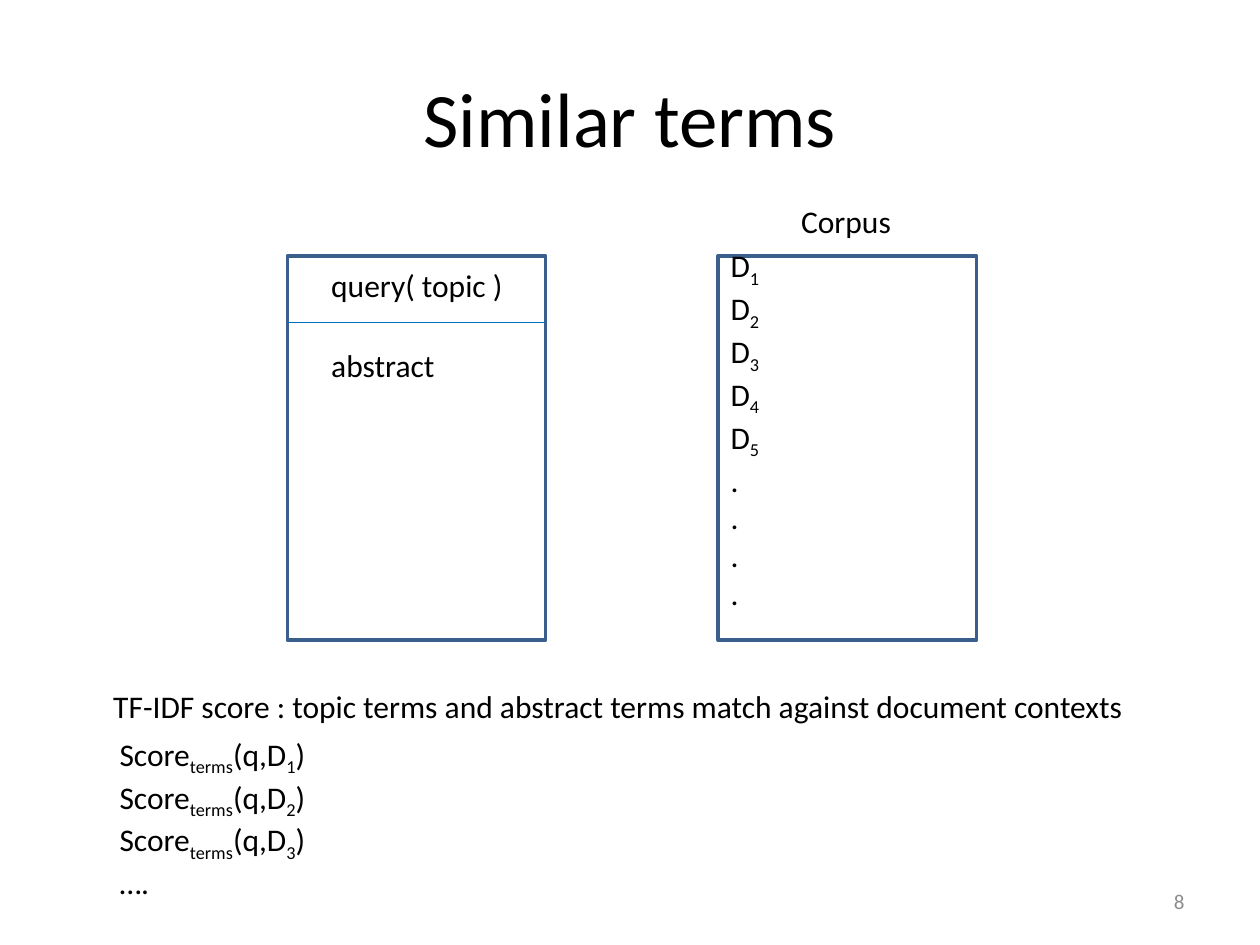
from dataclasses import dataclass

from lxml.etree import SubElement
from pptx import Presentation
from pptx.dml.color import RGBColor
from pptx.enum.shapes import MSO_CONNECTOR, MSO_SHAPE
from pptx.enum.text import MSO_ANCHOR, MSO_AUTO_SIZE, PP_ALIGN
from pptx.oxml.ns import qn
from pptx.shapes.autoshape import Shape
from pptx.shapes.shapetree import GroupShapes, SlideShapes
from pptx.text.text import TextFrame
from pptx.util import Pt

Tree = SlideShapes | GroupShapes


@dataclass(frozen=True)
class Theme:
    face: str = "Calibri"
    ink: RGBColor = RGBColor(0, 0, 0)
    gray: RGBColor = RGBColor(0x8C, 0x8C, 0x8C)
    edge: RGBColor = RGBColor(0x3A, 0x5F, 0x8C)
    rule: RGBColor = RGBColor(0x00, 0x70, 0xC0)
    head: int = 44
    body: int = 18
    foot: int = 12


@dataclass(frozen=True)
class Box:
    left: float
    top: float
    width: float
    height: float

    def area(self) -> tuple[Pt, Pt, Pt, Pt]:
        return Pt(self.left), Pt(self.top), Pt(self.width), Pt(self.height)


@dataclass(frozen=True)
class Label:
    box: Box
    lines: tuple[str, ...]
    wrap: bool = False


THEME = Theme()
QUERY = Box(164.2, 146.2, 147.6, 219.6)
CORPUS = Box(410.4, 146.2, 147.6, 219.6)
SPLIT = 184.3  # height of the rule between topic and abstract

# Every second part between bars is a subscript
DOCS = tuple(f"D|{n}" for n in range(1, 6)) + (".",) * 4
SCORES = tuple(f"Score|terms|(q,D|{n}|)" for n in range(1, 4)) + ("….",)

PARTS = (
    Label(Box(182.2, 148.3, 118.1, 29.1), ("query( topic )",)),
    Label(Box(182.2, 194.4, 74.2, 29.1), ("abstract",)),
)
NOTES = (
    Label(Box(450.7, 111.6, 66.2, 29.1), ("Corpus",)),
    Label(Box(57.6, 388.8, 625.7, 29.1),
          ("TF-IDF score : topic terms and abstract terms "
           "match against document contexts",), True),
    Label(Box(61.2, 416.2, 149.8, 94.3), SCORES, True),
)


def write(frame: TextFrame, lines: tuple[str, ...], size: int = THEME.body,
          ink: RGBColor = THEME.ink, align: PP_ALIGN = PP_ALIGN.LEFT) -> None:
    for i, line in enumerate(lines):
        para = frame.add_paragraph() if i else frame.paragraphs[0]
        para.alignment = align
        para.font.name = THEME.face
        para.font.size = Pt(size)
        para.font.color.rgb = ink
        for j, part in enumerate(line.split("|")):
            run = para.add_run()
            run.text = part
            if j % 2:
                run.font._element.set("baseline", "-25000")


def draw_label(tree: Tree, label: Label) -> None:
    frame = tree.add_textbox(*label.box.area()).text_frame
    frame.word_wrap = label.wrap
    frame.auto_size = MSO_AUTO_SIZE.SHAPE_TO_FIT_TEXT
    write(frame, label.lines)


def draw_frame(tree: Tree, box: Box) -> Shape:
    shape = tree.add_shape(MSO_SHAPE.RECTANGLE, *box.area())
    shape.shadow.inherit = False
    shape.fill.background()
    shape.line.color.rgb = THEME.edge
    shape.line.width = Pt(2)
    return shape


def draw_rule(tree: Tree, box: Box, top: float) -> None:
    line = tree.add_connector(MSO_CONNECTOR.STRAIGHT, Pt(box.left), Pt(top),
                              Pt(box.left + box.width), Pt(top))
    line.line.color.rgb = THEME.rule
    line.line.width = Pt(0.75)
    SubElement(line._element.spPr, qn("a:effectLst"))


def main() -> None:
    deck = Presentation()
    deck.slide_width, deck.slide_height = Pt(720), Pt(540)
    slide = deck.slides.add_slide(deck.slide_layouts[5])
    tree = slide.shapes

    # Title
    title = tree.title
    title.left, title.top, title.width, title.height = Box(36, 21.6, 648, 90).area()
    title.text_frame.vertical_anchor = MSO_ANCHOR.MIDDLE
    write(title.text_frame, ("Similar terms",), THEME.head, align=PP_ALIGN.CENTER)

    # Page number
    page = tree.add_textbox(*Box(516.2, 500.4, 167.8, 28.8).area()).text_frame
    page.word_wrap = True
    page.vertical_anchor = MSO_ANCHOR.MIDDLE
    write(page, ("8",), THEME.foot, THEME.gray, PP_ALIGN.RIGHT)

    # Query card: topic above the rule, abstract below
    card = tree.add_group_shape().shapes
    draw_frame(card, QUERY)
    draw_rule(card, QUERY, SPLIT)
    for label in PARTS:
        draw_label(card, label)

    # Corpus with its documents, one line kept free at the bottom
    docs = draw_frame(tree, CORPUS).text_frame
    docs.word_wrap = True
    docs.vertical_anchor = MSO_ANCHOR.MIDDLE
    docs.margin_bottom = Pt(25.6)
    write(docs, DOCS)

    # Caption, scoring rule and scores
    for label in NOTES:
        draw_label(tree, label)

    deck.save("out.pptx")


if __name__ == "__main__":
    main()
